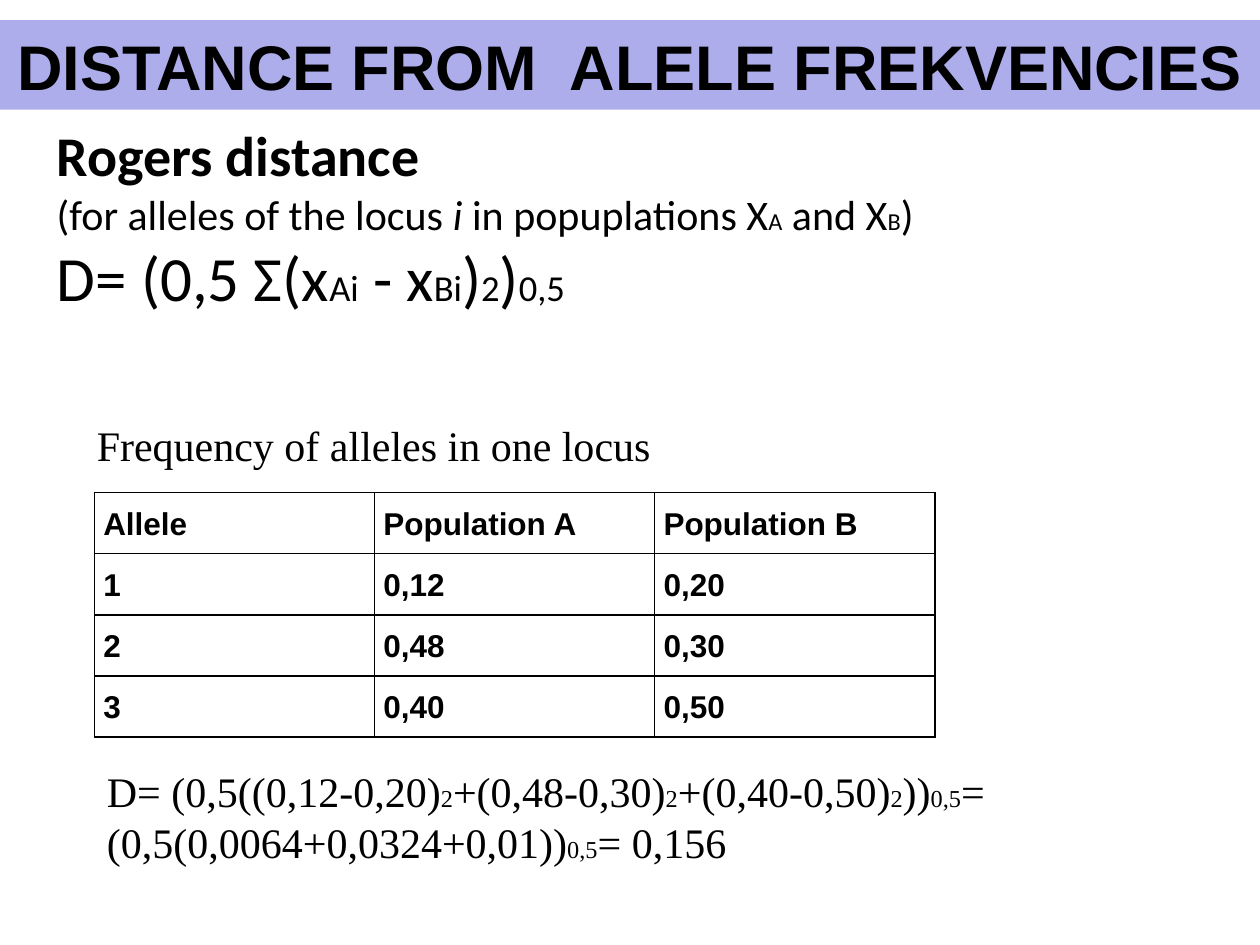
from lxml import etree
from pptx import Presentation
from pptx.dml.color import RGBColor
from pptx.enum import text
from pptx.oxml import ns
from pptx.util import Inches, Pt

BLACK = RGBColor(0x00, 0x00, 0x00)
LAVENDER = RGBColor(0xAD, 0xAD, 0xEB)

SUPERSCRIPT = 30
SUBSCRIPT = -25

ALLELE_ROWS = [
    ["Allele", "Population A", "Population B"],
    ["1", "0,12", "0,20"],
    ["2", "0,48", "0,30"],
    ["3", "0,40", "0,50"],
]


def set_attributes(target, values):
    for name, value in values.items():
        setattr(target, name, value)


def place(shape, left, top, width, height):
    set_attributes(shape, {"left": Inches(left), "top": Inches(top),
                           "width": Inches(width), "height": Inches(height)})


def add_run(paragraph, content, font, size, baseline=0, **styles):
    run = paragraph.add_run()
    run.text = content
    set_attributes(run.font, {"name": font, "size": Pt(size), **styles})
    run.font.color.rgb = BLACK
    if baseline:
        run.font._element.set("baseline", str(baseline))


def add_formula(paragraph, parts, font, size):
    """Write plain strings and (string, baseline) pairs as runs."""
    for part in parts:
        content, baseline = (part, 0) if isinstance(part, str) else part
        add_run(paragraph, content, font, size, baseline)


def add_text_box(slide, box, parts, wrap):
    shape = slide.shapes.add_textbox(*map(Inches, box))
    shape.text_frame.word_wrap = wrap
    add_formula(shape.text_frame.paragraphs[0], parts, "Times New Roman", 24)


def fill_title(title):
    place(title, 0, 0.16, 10, 0.71)
    title.fill.solid()
    title.fill.fore_color.rgb = LAVENDER
    frame = title.text_frame
    set_attributes(frame, {"auto_size": text.MSO_AUTO_SIZE.NONE,
                           "vertical_anchor": text.MSO_ANCHOR.MIDDLE})
    paragraph = frame.paragraphs[0]
    paragraph.alignment = text.PP_ALIGN.CENTER
    add_run(paragraph, "DISTANCE FROM  ALELE FREKVENCIES", "Arial", 36, bold=True)


def remove_bullet(paragraph):
    properties = paragraph._p.get_or_add_pPr()
    properties.set("marL", "0")
    properties.set("indent", "0")
    paragraph.space_before = Pt(0)
    etree.SubElement(properties, ns.qn("a:buNone"))


def fill_definition(body):
    place(body, 0.35, 0.91, 9.38, 2.19)
    frame = body.text_frame
    frame.auto_size = text.MSO_AUTO_SIZE.NONE
    heading, formula = frame.paragraphs[0], frame.add_paragraph()
    for paragraph in (heading, formula):
        remove_bullet(paragraph)

    add_run(heading, "Rogers distance ", "Calibri", 32, bold=True)
    heading.add_line_break()
    add_run(heading, "(for alleles of the locus ", "Calibri", 24)
    add_run(heading, "i", "Calibri", 24, italic=True)
    add_formula(heading, [" in popuplations X", ("A", SUBSCRIPT), " and X",
                          ("B", SUBSCRIPT), ")"], "Calibri", 24)
    add_formula(formula, ["D= (0,5 Σ(x", ("Ai", SUBSCRIPT), " - x",
                          ("Bi", SUBSCRIPT), ")", ("2", SUPERSCRIPT), ")",
                          ("0,5", SUPERSCRIPT)], "Calibri", 36)


def add_cell_borders(cell):
    properties = cell._tc.get_or_add_tcPr()
    for side in ("lnL", "lnR", "lnT", "lnB"):
        line = etree.SubElement(properties, ns.qn(f"a:{side}"), w=str(Pt(1)))
        solid = etree.SubElement(line, ns.qn("a:solidFill"))
        etree.SubElement(solid, ns.qn("a:srgbClr"), val=str(BLACK))


def add_allele_table(slide, rows):
    frame = slide.shapes.add_table(len(rows), len(rows[0]), Inches(0.75), Inches(3.91),
                                   Inches(6.67), Inches(0.46 * len(rows)))
    table = frame.table
    set_attributes(table, {"first_row": False, "horz_banding": False})
    margins = {f"margin_{side}": Inches(0.07)
               for side in ("left", "right", "top", "bottom")}
    for row_index, row in enumerate(rows):
        for column_index, content in enumerate(row):
            cell = table.cell(row_index, column_index)
            set_attributes(cell, margins)
            add_cell_borders(cell)
            cell.fill.background()
            paragraph = cell.text_frame.paragraphs[0]
            paragraph.line_spacing = 1.15
            add_run(paragraph, content, "Arial", 18, bold=True)


def main():
    presentation = Presentation()
    set_attributes(presentation, {"slide_width": Inches(10), "slide_height": Inches(7.5)})
    slide = presentation.slides.add_slide(presentation.slide_layouts[1])

    # Title band and definition of the distance
    fill_title(slide.shapes.title)
    fill_definition(slide.placeholders[1])

    # Allele frequencies
    add_text_box(slide, (0.67, 3.28, 4.64, 0.5),
                 ["Frequency of alleles in one locus"], wrap=False)
    add_allele_table(slide, ALLELE_ROWS)

    # Worked example
    square, root = ("2", SUPERSCRIPT), ("0,5", SUPERSCRIPT)
    add_text_box(slide, (0.75, 6.03, 9.06, 0.91),
                 ["D= (0,5((0,12-0,20)", square, "+(0,48-0,30)", square,
                  "+(0,40-0,50)", square, "))", root,
                  "= (0,5(0,0064+0,0324+0,01))", root, "= 0,156"], wrap=True)

    presentation.save("out.pptx")


if __name__ == "__main__":
    main()
